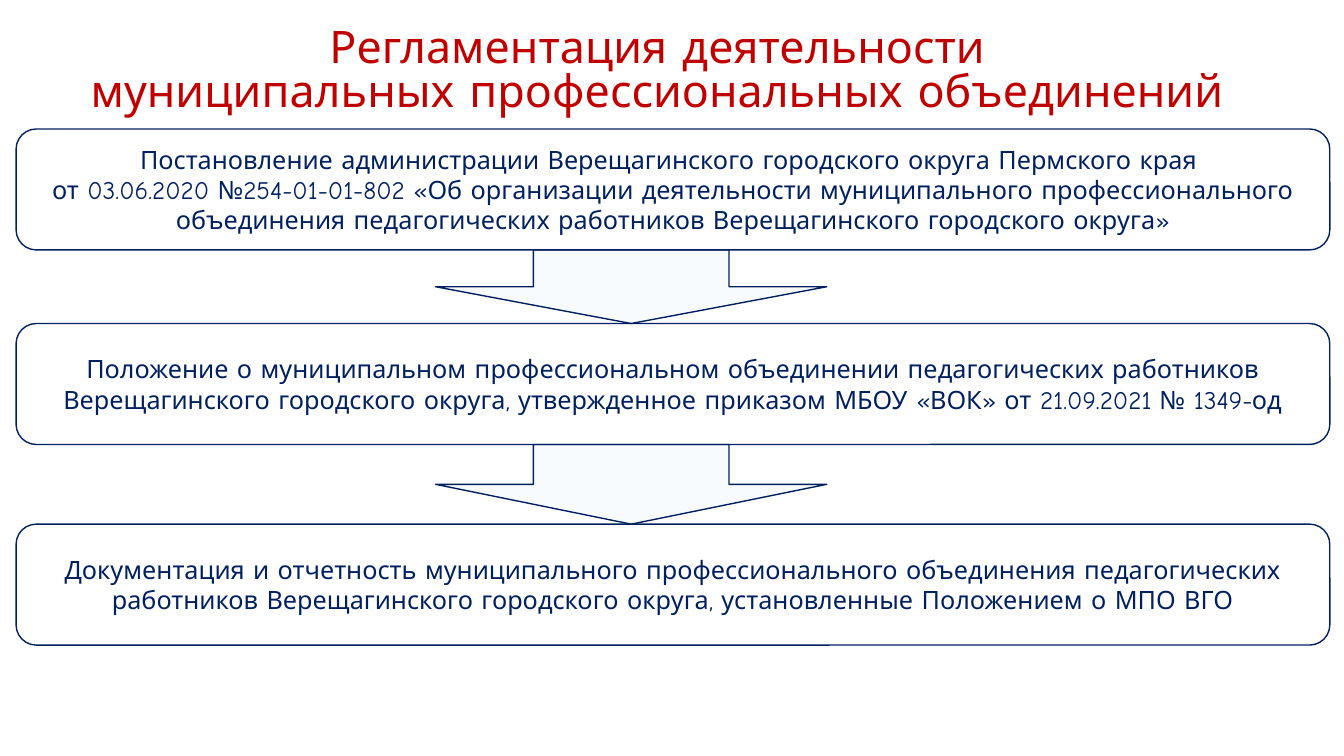
from lxml import etree
from pptx import Presentation
from pptx.dml.color import RGBColor
from pptx.enum.shapes import MSO_SHAPE
from pptx.enum.text import MSO_ANCHOR, PP_ALIGN
from pptx.oxml.ns import qn
from pptx.util import Inches, Pt

ROUNDED = MSO_SHAPE.ROUNDED_RECTANGLE
DOWN_ARROW = MSO_SHAPE.DOWN_ARROW
MIDDLE = MSO_ANCHOR.MIDDLE
CENTER = PP_ALIGN.CENTER

FONT = "Comic Neue"
RED, NAVY, PALE_BLUE = "C00000", "002060", "DEEBF7"
LEFT, STEP_WIDTH, STEP_HEIGHT = 0.16, 13.03, 1.2
ARROW_LEFT, ARROW_WIDTH = 4.32, 3.88

TITLE = "Регламентация деятельности \vмуниципальных профессиональных объединений "
# Top edge and wording of each regulation step; \v is a line break
STEPS = [
    (1.28, "Постановление администрации Верещагинского городского округа Пермского края \v"
           "от 03.06.2020 №254-01-01-802 «Об организации деятельности муниципального "
           "профессионального объединения педагогических работников Верещагинского "
           "городского округа»"),
    (3.21, "Положение о муниципальном профессиональном объединении педагогических "
           "работников Верещагинского городского округа, утвержденное приказом "
           "МБОУ «ВОК» от 21.09.2021 № 1349-од"),
    (5.2, "Документация и отчетность муниципального профессионального объединения "
          "педагогических работников Верещагинского городского округа, установленные "
          "Положением о МПО ВГО"),
]


def color(value):
    return RGBColor.from_string(value)


def write(shape, text, size=18, ink=NAVY, line_spacing=None):
    frame = shape.text_frame
    frame.word_wrap = True
    frame.auto_size = None
    frame.vertical_anchor = MIDDLE
    paragraph = frame.paragraphs[0]
    paragraph.text = text
    paragraph.alignment = CENTER
    if line_spacing:
        paragraph.line_spacing = Pt(line_spacing)
    for run in paragraph.runs:
        run.font.name = FONT
        run.font.size = Pt(size)
        run.font.color.rgb = color(ink)


def add_outlined(slide, preset, left, top, width, height):
    shape = slide.shapes.add_shape(
        preset, Inches(left), Inches(top), Inches(width), Inches(height))
    shape.shadow.inherit = False
    shape.fill.background()
    shape.line.color.rgb = color(NAVY)
    shape.line.width = Pt(1)
    return shape


def add_title(slide):
    title = slide.shapes.title
    title.left, title.top = Inches(LEFT), Inches(0.14)
    title.width, title.height = Inches(12.87), Inches(1.15)
    write(title, TITLE, size=32, ink=RED, line_spacing=32)


def add_step(slide, top, text):
    step = add_outlined(slide, ROUNDED, LEFT, top, STEP_WIDTH, STEP_HEIGHT)
    write(step, text)


def add_arrow(slide, top, bottom):
    arrow = add_outlined(slide, DOWN_ARROW, ARROW_LEFT, top, ARROW_WIDTH, bottom - top)
    arrow.fill.solid()
    arrow.fill.fore_color.rgb = color(PALE_BLUE)
    # Make the fill mostly transparent
    fill_color = arrow.fill._xPr.find(qn("a:solidFill"))[0]
    etree.SubElement(fill_color, qn("a:alpha")).set("val", "19000")


def main():
    prs = Presentation()
    prs.slide_width, prs.slide_height = Inches(13.33), Inches(7.5)
    slide = prs.slides.add_slide(prs.slide_layouts[5])

    add_title(slide)
    for top, text in STEPS:
        add_step(slide, top, text)

    # Arrows fill the gaps between consecutive steps
    for (upper, _), (lower, _) in zip(STEPS, STEPS[1:]):
        add_arrow(slide, upper + STEP_HEIGHT, lower)

    prs.save("out.pptx")


if __name__ == "__main__":
    main()
